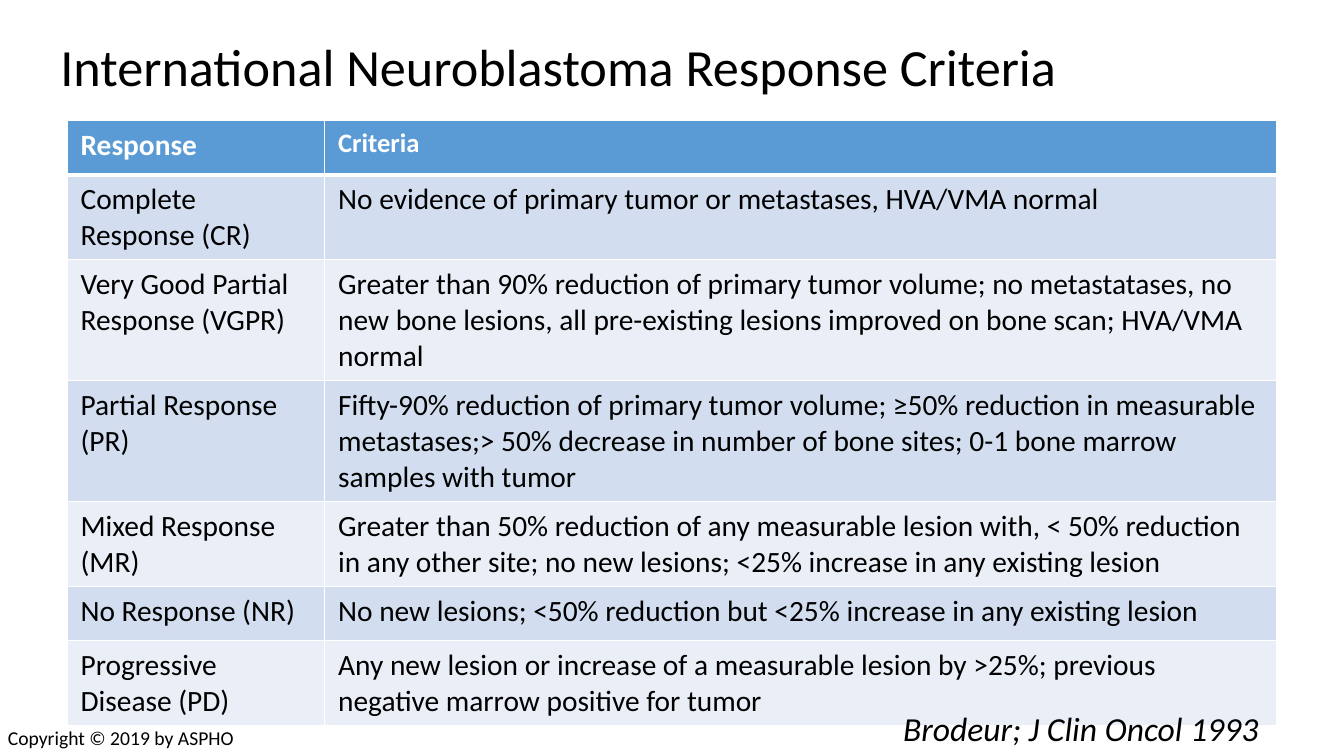
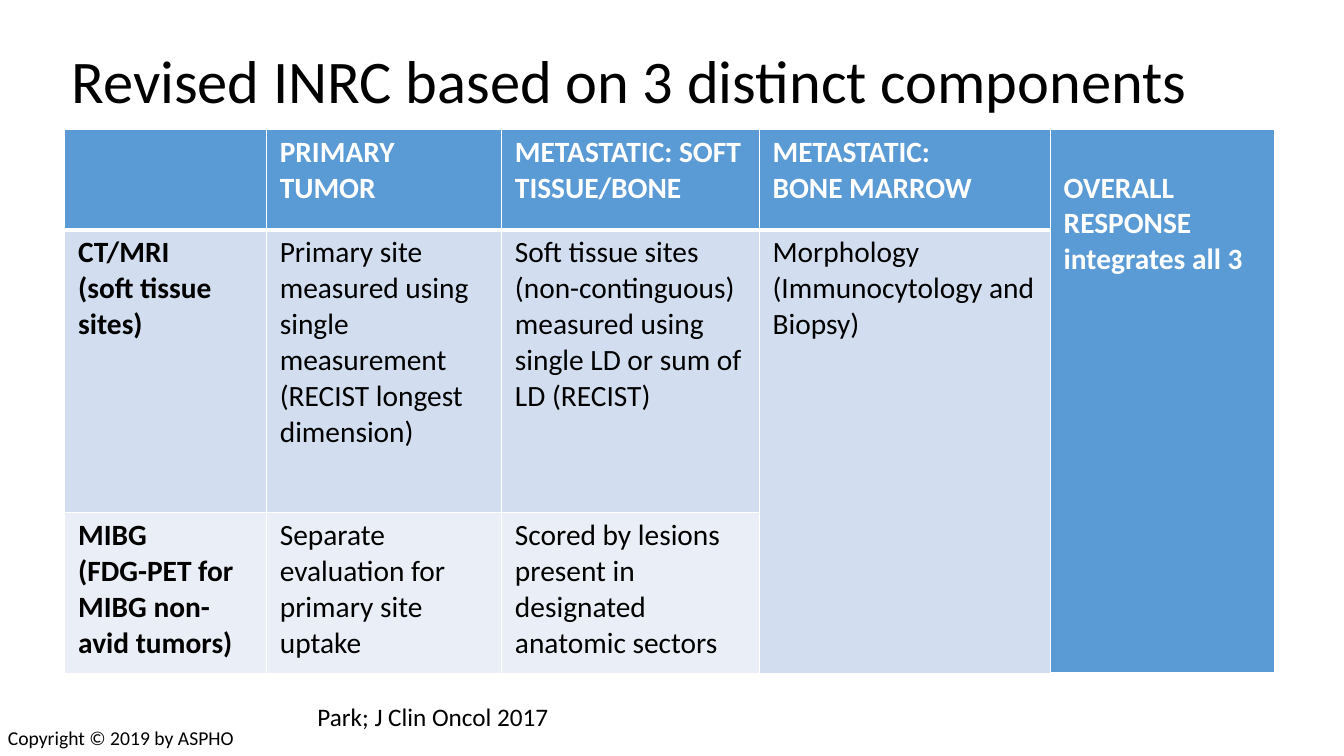
from dataclasses import dataclass

from lxml import etree
from pptx import Presentation
from pptx.dml.color import RGBColor
from pptx.enum.text import MSO_ANCHOR
from pptx.oxml.ns import qn
from pptx.util import Pt

MIDDLE = MSO_ANCHOR.MIDDLE
TOP = MSO_ANCHOR.TOP
BLANK_LAYOUT = 6


@dataclass(frozen=True)
class Theme:
    font: str = "Calibri"
    text: str = "000000"
    white: str = "FFFFFF"
    header: str = "5B9BD5"
    bands: tuple = ("D2DEEF", "EAEFF7")
    table_size: float = 21
    small_header_size: float = 19
    citation_size: float = 18
    large_citation_size: float = 24
    footer_size: float = 14
    thin_border: float = 1
    thick_border: float = 3
    side_margin: float = 9.6


THEME = Theme()


class Deck:
    def __init__(self, theme):
        self.theme = theme
        self.presentation = Presentation()
        self.presentation.slide_width = Pt(960)
        self.presentation.slide_height = Pt(540)
        self.slide = None

    def new_slide(self):
        layout = self.presentation.slide_layouts[BLANK_LAYOUT]
        self.slide = self.presentation.slides.add_slide(layout)

    def add_text_run(self, paragraph, text, size, color, bold=False, italic=False):
        run = paragraph.add_run()
        run.text = text
        font = run.font
        font.name = self.theme.font
        font.size = Pt(size)
        font.bold = bold
        font.italic = italic
        font.color.rgb = RGBColor.from_string(color)

    def text(self, text, box, size, wrap=True, anchor=TOP, italic=False):
        shape = self.slide.shapes.add_textbox(*map(Pt, box))
        frame = shape.text_frame
        frame.word_wrap = wrap
        frame.vertical_anchor = anchor
        paragraph = frame.paragraphs[0]
        self.add_text_run(paragraph, text, size, self.theme.text, italic=italic)
        return paragraph

    def title(self, text, box, size):
        self.text(text, box, size, anchor=MIDDLE).line_spacing = 0.9

    def citation(self, text, box, size, italic=False):
        self.text(text, box, size, wrap=False, italic=italic)

    def footer(self):
        self.text("Copyright © 2019 by ASPHO", (-1.5, 515, 245, 24.5), self.theme.footer_size)

    def borders(self, cell, row_index):
        """Draw white cell edges, thicker between the header and the body."""
        theme = self.theme
        widths = {
            "a:lnL": theme.thin_border,
            "a:lnR": theme.thin_border,
            "a:lnT": theme.thick_border if row_index == 1 else theme.thin_border,
            "a:lnB": theme.thick_border if row_index == 0 else theme.thin_border,
        }
        properties = cell._tc.get_or_add_tcPr()
        for position, (tag, width) in enumerate(widths.items()):
            line = etree.Element(qn(tag), w=str(Pt(width)))
            fill = etree.SubElement(line, qn("a:solidFill"))
            etree.SubElement(fill, qn("a:srgbClr"), val=theme.white)
            properties.insert(position, line)

    def table(self, rows, left, top, widths, heights, margin,
              merges=(), bold_first=False, sizes=None, top_margins=None):
        """Build a banded table; each cell is a tuple of paragraphs.

        merges holds (column, first row, last row); sizes and top_margins
        hold exceptions by (row, column).
        """
        theme = self.theme
        sizes = sizes or {}
        top_margins = top_margins or {}
        frame = self.slide.shapes.add_table(
            len(heights), len(widths), Pt(left), Pt(top), Pt(sum(widths)), Pt(sum(heights)))
        table = frame.table
        table.first_row = table.horz_banding = False
        for column, width in zip(table.columns, widths):
            column.width = Pt(width)
        for row, height in zip(table.rows, heights):
            row.height = Pt(height)
        for column, first, last in merges:
            table.cell(first, column).merge(table.cell(last, column))

        for row_index, row in enumerate(rows):
            is_header = row_index == 0
            fill = theme.header if is_header else theme.bands[(row_index - 1) % 2]
            color = theme.white if is_header else theme.text
            for column_index, paragraphs in enumerate(row):
                place = (row_index, column_index)
                cell = table.cell(*place)
                cell.fill.solid()
                cell.fill.fore_color.rgb = RGBColor.from_string(fill)
                cell.margin_left = cell.margin_right = Pt(theme.side_margin)
                cell.margin_top = Pt(top_margins.get(place, margin))
                cell.margin_bottom = Pt(margin)
                self.borders(cell, row_index)
                bold = is_header or (bold_first and column_index == 0)
                size = sizes.get(place, theme.table_size)
                text_frame = cell.text_frame
                for index, text in enumerate(paragraphs):
                    paragraph = text_frame.add_paragraph() if index else text_frame.paragraphs[0]
                    self.add_text_run(paragraph, text, size, color, bold)


CRITERIA = [
    ("Response", "Criteria"),
    ("Complete Response (CR)", "No evidence of primary tumor or metastases, HVA/VMA normal"),
    ("Very Good Partial Response (VGPR)",
     "Greater than 90% reduction of primary tumor volume; no metastatases, no new bone lesions, "
     "all pre-existing lesions improved on bone scan; HVA/VMA normal"),
    ("Partial Response (PR)",
     "Fifty-90% reduction of primary tumor volume; ≥50% reduction in measurable metastases;"
     "> 50% decrease in number of bone sites; 0-1 bone marrow samples with tumor"),
    ("Mixed Response (MR)",
     "Greater than 50% reduction of any measurable lesion with, < 50% reduction in any other "
     "site; no new lesions; <25% increase in any existing lesion"),
    ("No Response (NR)",
     "No new lesions; <50% reduction but <25% increase in any existing lesion"),
    ("Progressive Disease (PD)",
     "Any new lesion or increase of a measurable lesion by >25%; previous negative marrow "
     "positive for tumor"),
]

COMPONENTS = [
    [(), ("PRIMARY TUMOR",), ("METASTATIC: SOFT TISSUE/BONE",),
     ("METASTATIC:", "BONE MARROW"), ("OVERALL RESPONSE integrates all 3",)],
    [("CT/MRI", "(soft tissue sites)"),
     ("Primary site measured using", "single measurement (RECIST longest dimension)"),
     ("Soft tissue sites (non-continguous) measured using single LD or sum of LD (RECIST)",),
     ("Morphology", "(Immunocytology and Biopsy)")],
    [("MIBG", "(FDG-PET for MIBG non-avid tumors)"),
     ("Separate evaluation for primary site uptake",),
     ("Scored by lesions present in designated anatomic sectors",)],
]


def response_criteria(deck):
    deck.new_slide()
    deck.title("International Neuroblastoma Response Criteria", (36, 4.5, 912, 90), 37.3)
    one_line, two_lines, three_lines = 38.8, 60.5, 86.4
    deck.table(
        [[(text,) for text in row] for row in CRITERIA],
        48, 86.2, (184, 680),
        (one_line, two_lines, three_lines, three_lines, two_lines, one_line, two_lines),
        margin=4.8, sizes={(0, 1): THEME.small_header_size})
    deck.citation("Brodeur; J Clin Oncol 1993", (638, 502, 271, 36),
                  THEME.large_citation_size, italic=True)
    deck.footer()


def revised_components(deck):
    deck.new_slide()
    deck.title("Revised INRC based on 3 distinct components", (44, 8, 828, 104.4), 43.2)
    deck.table(
        COMPONENTS, 46.3, 92.2, (144, 168, 184, 208, 160), (72, 201.6, 115.2),
        margin=3.6, merges=((3, 1, 2), (4, 0, 2)), bold_first=True,
        top_margins={(0, 4): 29.2})
    deck.citation("Park; J Clin Oncol 2017", (219.6, 497.5, 181.4, 29), THEME.citation_size)
    deck.footer()


def main():
    deck = Deck(THEME)
    response_criteria(deck)
    revised_components(deck)
    deck.presentation.save("out.pptx")


if __name__ == "__main__":
    main()
